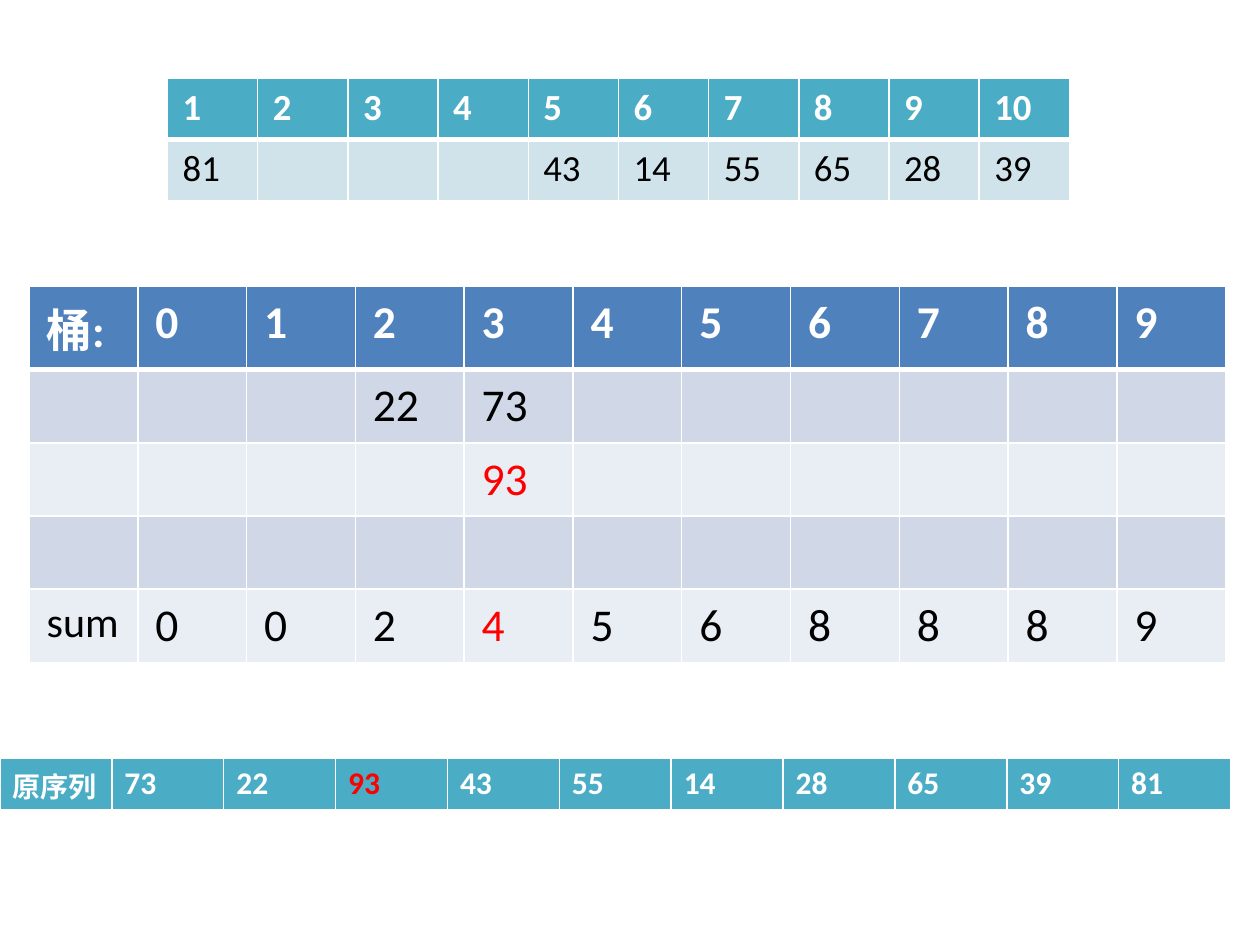
"""Build a slide of three tables that show one step of a radix sort."""
from lxml.etree import SubElement
from pptx import Presentation
from pptx.dml.color import RGBColor as Rgb
from pptx.oxml.ns import qn
from pptx.util import Inches, Pt

THEME = {
    "font": "Calibri", "head": "FFFFFF", "body": "000000", "mark": "FF0000",
    "rule": "FFFFFF", "teal": "4BACC6", "pale": "D0E3EA",
    "blue": "4F81BD", "band": "D0D8E8", "light": "E9EDF4",
    "big": 26, "sum": 24, "mid": 21, "small": 18, "label": 16,
    "thin": 1, "thick": 3,
}
GAP = [""] * 11
TABLES = [
    {"box": (0.23, 2.27, 9.5, 2.9), "pad": (0.14, 0.07), "size": "big",
     "fills": ("blue", "band", "light", "band", "light"),
     "marks": {(2, 4), (4, 4)}, "sizes": {(4, 0): "sum"},
     "rows": [["桶:", *range(10)],
              ["", "", "", 22, 73] + GAP[5:],
              ["", "", "", "", 93] + GAP[5:],
              GAP,
              ["sum", 0, 0, 2, 4, 5, 6, 8, 8, 8, 9]]},
    {"box": (1.33, 0.62, 7.16, 0.97), "pad": (0.12, 0.06), "size": "mid",
     "fills": ("teal", "pale"), "marks": set(), "sizes": {},
     "rows": [[*range(1, 11)],
              [81, "", "", "", 43, 14, 55, 65, 28, 39]]},
    {"box": (0, 6.02, 9.77, 0.41), "pad": (0.1, 0.05), "size": "small",
     "fills": ("teal",), "marks": {(0, 3)}, "sizes": {(0, 0): "label"},
     "rows": [["原序列", 73, 22, 93, 43, 55, 14, 28, 65, 39, 81]]},
]


def color(name):
    return Rgb.from_string(THEME[name])


def edge(cell, row):
    props = cell._tc.get_or_add_tcPr()
    heavy = {"lnB": row == 0, "lnT": row == 1}
    for tag in ("lnL", "lnR", "lnT", "lnB"):
        width = THEME["thick" if heavy.get(tag) else "thin"]
        line = SubElement(props, qn(f"a:{tag}"), w=str(Pt(width)))
        fill = SubElement(line, qn("a:solidFill"))
        SubElement(fill, qn("a:srgbClr"), val=THEME["rule"])


def style(cell, spot, data):
    row = spot[0]
    edge(cell, row)
    cell.fill.solid()
    cell.fill.fore_color.rgb = color(data["fills"][row])
    side, top = map(Inches, data["pad"])
    cell.margin_left = cell.margin_right = side
    cell.margin_top = cell.margin_bottom = top
    ink = "mark" if spot in data["marks"] else "body" if row else "head"
    for run in cell.text_frame.paragraphs[0].runs:
        font = run.font
        font.name = THEME["font"]
        font.size = Pt(THEME[data["sizes"].get(spot, data["size"])])
        font.bold = row == 0
        font.color.rgb = color(ink)


def draw(slide, data):
    rows = data["rows"]
    box = map(Inches, data["box"])
    table = slide.shapes.add_table(len(rows), len(rows[0]), *box).table
    table.horz_banding = False
    for r, items in enumerate(rows):
        for c, item in enumerate(items):
            cell = table.cell(r, c)
            cell.text_frame.text = str(item)
            style(cell, (r, c), data)


def main():
    deck = Presentation()
    deck.slide_width, deck.slide_height = Inches(10), Inches(7.5)
    slide = deck.slides.add_slide(deck.slide_layouts[6])
    for data in TABLES:
        draw(slide, data)
    deck.save("out.pptx")


if __name__ == "__main__":
    main()
